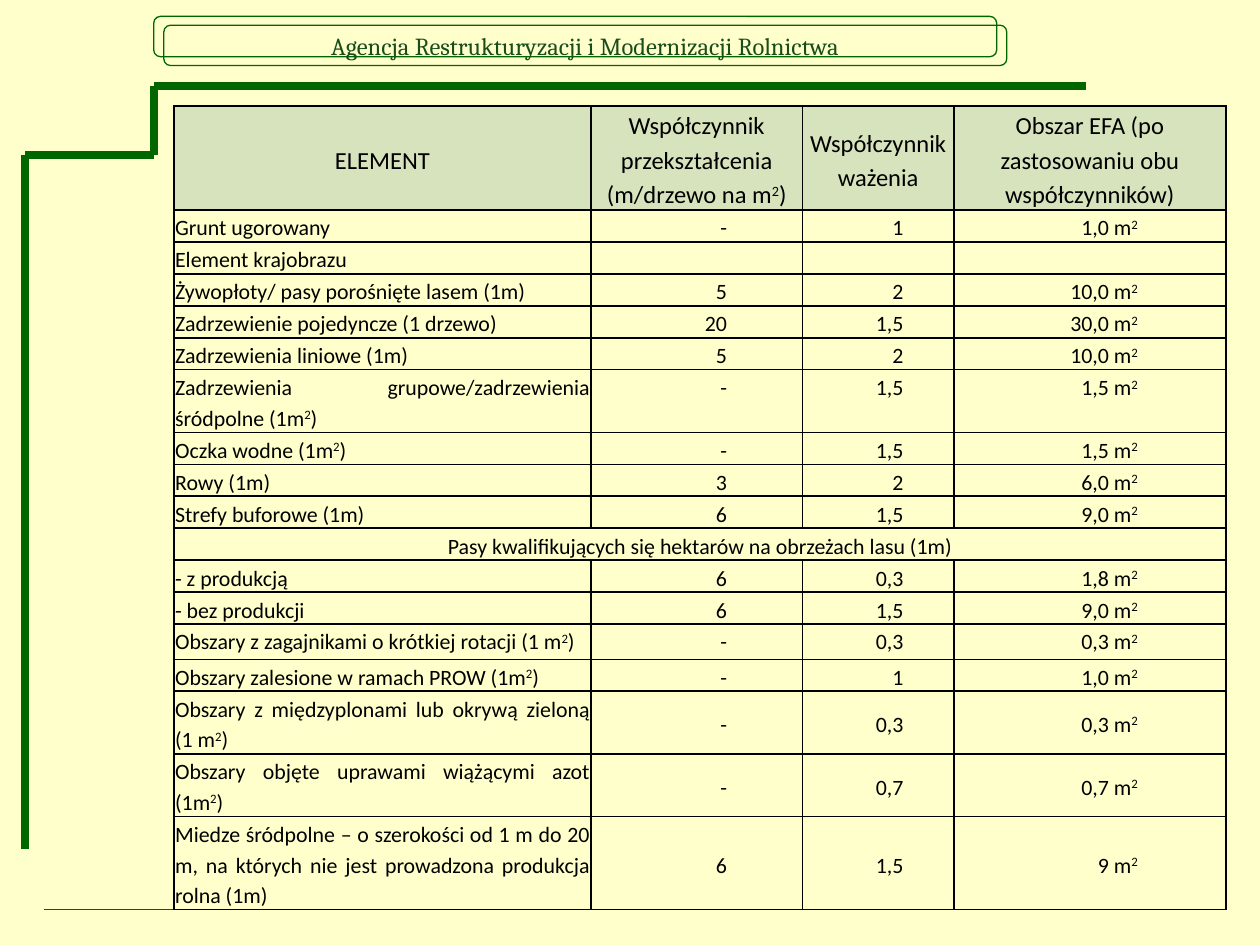
"""Build the slide with the table of EFA conversion and weighting factors."""
from lxml import etree
from pptx import Presentation
from pptx.dml.color import RGBColor
from pptx.enum.shapes import MSO_CONNECTOR, MSO_SHAPE
from pptx.enum.text import MSO_ANCHOR, PP_ALIGN
from pptx.oxml.ns import qn
from pptx.util import Inches, Pt

LINE, ROUND = MSO_CONNECTOR.STRAIGHT, MSO_SHAPE.ROUNDED_RECTANGLE
TOP, MIDDLE = MSO_ANCHOR.TOP, MSO_ANCHOR.MIDDLE
CENTER, RIGHT, JUSTIFY = PP_ALIGN.CENTER, PP_ALIGN.RIGHT, PP_ALIGN.JUSTIFY

COLORS = {"page": "FFFFCC", "green": "006600", "title": "194D19",
          "head": "D6E3BC", "text": "000000"}
TITLE = "Agencja Restrukturyzacji i Modernizacji Rolnictwa"
HEAD = ("ELEMENT", "Współczynnik przekształcenia (m/drzewo na m²)",
        "Współczynnik ważenia", "Obszar EFA (po zastosowaniu obu współczynników)")
ROWS = [
    ("Grunt ugorowany", "-", "1", "1,0 m²"),
    ("Element krajobrazu", "", "", ""),
    ("Żywopłoty/ pasy porośnięte lasem (1m)", "5", "2", "10,0 m²"),
    ("Zadrzewienie pojedyncze (1 drzewo)", "20", "1,5", "30,0 m²"),
    ("Zadrzewienia liniowe (1m)", "5", "2", "10,0 m²"),
    ("Zadrzewienia grupowe/zadrzewienia śródpolne (1m²)", "-", "1,5", "1,5 m²"),
    ("Oczka wodne (1m²)", "-", "1,5", "1,5 m²"),
    ("Rowy (1m)", "3", "2", "6,0 m²"),
    ("Strefy buforowe (1m)", "6", "1,5", "9,0 m²"),
    ("Pasy kwalifikujących się hektarów na obrzeżach lasu (1m)",),
    ("- z produkcją", "6", "0,3", "1,8 m²"),
    ("- bez produkcji", "6", "1,5", "9,0 m²"),
    ("Obszary z zagajnikami o krótkiej rotacji (1 m²)", "-", "0,3", "0,3 m²"),
    ("Obszary zalesione w ramach PROW (1m²)", "-", "1", "1,0 m²"),
    ("Obszary z międzyplonami lub okrywą zieloną (1 m²)", "-", "0,3", "0,3 m²"),
    ("Obszary objęte uprawami wiążącymi azot (1m²)", "-", "0,7", "0,7 m²"),
    ("Miedze śródpolne – o szerokości od 1 m do 20 m, na których nie jest "
     "prowadzona produkcja rolna (1m)", "6", "1,5", "9 m²"),
]
WIDTHS = (3.31, 1.68, 1.2, 2.16)
INSETS = (0.01, 0.6, 0.4, 0.7)
ROW = 0.24
TALL = {0: 0.8, 6: 0.47, 13: 0.28, 15: 0.47, 16: 0.47, 17: 0.71}
MID_FROM = 15
RULES = [
    (1.22, 0.68, 8.62, 0.68, 4.5),
    (0.2, 1.23, 0.2, 6.74, 4.5),
    (0.2, 1.23, 1.22, 1.23, 4.5),
    (1.22, 1.23, 1.22, 0.68, 4.5),
    (0.35, 7.22, 9.65, 7.22, 0.25),
]
FRAMES = [(1.22, 0.13, ""), (1.3, 0.2, TITLE)]


def color(name):
    return RGBColor.from_string(COLORS[name])


def style(font, name, size, tint):
    font.name, font.size = name, Pt(size)
    font.color.rgb = color(tint)


def add_rule(slide, x1, y1, x2, y2, width):
    rule = slide.shapes.add_connector(LINE, *map(Inches, (x1, y1, x2, y2)))
    rule.line.color.rgb = color("green")
    rule.line.width = Pt(width)
    etree.SubElement(rule._element.spPr, qn("a:effectLst"))


def add_frame(slide, left, top, text):
    box = slide.shapes.add_shape(ROUND, *map(Inches, (left, top, 6.69, 0.32)))
    box.shadow.inherit = False
    box.fill.background()
    box.line.color.rgb = color("green")
    box.line.width = Pt(0.75)
    if text:
        frame = box.text_frame
        frame.word_wrap = False
        frame.vertical_anchor = MIDDLE
        para = frame.paragraphs[0]
        para.text = text
        para.alignment = CENTER
        style(para.runs[0].font, "Cambria", 14, "title")


def add_edges(cell):
    props = cell._tc.get_or_add_tcPr()
    for i, side in enumerate(("lnL", "lnR", "lnT", "lnB")):
        edge = etree.Element(qn(f"a:{side}"), w=str(Pt(1)))
        fill = etree.SubElement(edge, qn("a:solidFill"))
        etree.SubElement(fill, qn("a:srgbClr"), val=COLORS["text"])
        props.insert(i, edge)


def fill_cell(cell, text, size, align, anchor, inset):
    cell.margin_left = cell.margin_top = Inches(0.01)
    cell.margin_right, cell.margin_bottom = Inches(inset), 0
    cell.vertical_anchor = anchor
    para = cell.text_frame.paragraphs[0]
    para.alignment, para.line_spacing = align, 1.15
    for i, part in enumerate(text.partition("²")):
        if part:
            run = para.add_run()
            run.text = "2" if i == 1 else part
            style(run.font, "Calibri", size, "text")
            if i == 1:
                run.font._element.set("baseline", "30000")
    if not text:
        etree.SubElement(para._p, qn("a:endParaRPr"), sz=str(int(size * 100)))


def add_grid(slide):
    heights = [TALL.get(r, ROW) for r in range(len(ROWS) + 1)]
    spot = (1.38, 0.84, sum(WIDTHS), sum(heights))
    grid = slide.shapes.add_table(len(heights), len(WIDTHS), *map(Inches, spot)).table
    grid.first_row = grid.horz_banding = False
    for col, width in zip(grid.columns, WIDTHS):
        col.width = Inches(width)
    for r, texts in enumerate([HEAD, *ROWS]):
        grid.rows[r].height = Inches(heights[r])
        wide = len(texts) == 1
        if wide:
            grid.cell(r, 0).merge(grid.cell(r, len(WIDTHS) - 1))
        for c, inset in enumerate(INSETS):
            cell = grid.cell(r, c)
            text = texts[c] if c < len(texts) else ""
            if r == 0:
                fill_cell(cell, text, 14, CENTER, MIDDLE, 0.01)
                cell.fill.solid()
                cell.fill.fore_color.rgb = color("head")
            else:
                align = CENTER if wide else RIGHT if c else JUSTIFY
                anchor = MIDDLE if c and r >= MID_FROM else TOP
                fill_cell(cell, text, 12.5, align, anchor, inset)
                cell.fill.background()
            add_edges(cell)


def main():
    deck = Presentation()
    deck.slide_width, deck.slide_height = Inches(10), Inches(7.5)
    slide = deck.slides.add_slide(deck.slide_layouts[6])
    slide.background.fill.solid()
    slide.background.fill.fore_color.rgb = color("page")
    for rule in RULES:
        add_rule(slide, *rule)
    for frame in FRAMES:
        add_frame(slide, *frame)
    add_grid(slide)
    deck.save("out.pptx")


if __name__ == "__main__":
    main()
